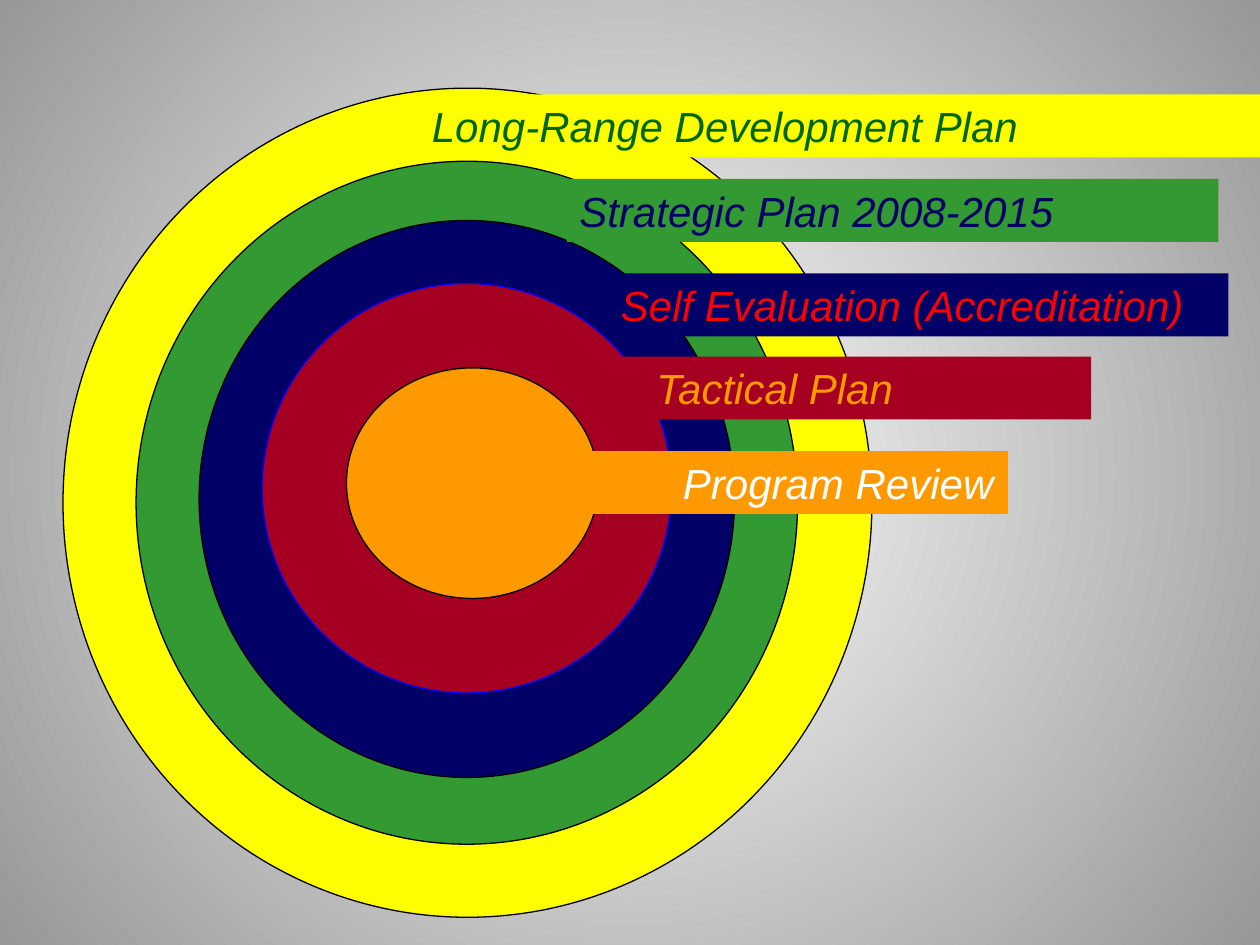
from lxml.etree import SubElement
from pptx import Presentation
from pptx.dml.color import RGBColor
from pptx.enum.shapes import MSO_SHAPE
from pptx.enum.text import MSO_ANCHOR, PP_ALIGN
from pptx.oxml.ns import qn
from pptx.util import Inches, Pt

YELLOW, GREEN, NAVY = "FFFF00", "339933", "000066"
RED, ORANGE = "A50021", "FF9900"

RINGS = [
    ((0.5, 0.7, 6.42, 6.58), YELLOW, "000000"),
    ((1.08, 1.28, 5.25, 5.42), GREEN, "000000"),
    ((1.58, 1.75, 4.25, 4.42), NAVY, "000000"),
    ((2.08, 2.25, 3.25, 3.25), RED, "0000FF"),
    ((2.75, 2.92, 2, 1.83), ORANGE, "000000"),
]
BARS = [
    ((4.5, 1.42, 5.17, 0.5), GREEN, "Strategic Plan 2008-2015", NAVY, 0.1),
    ((3.33, 0.75, 6.67, 0.5), YELLOW, "Long-Range Development Plan", "006600", 0.1),
    ((4.83, 2.17, 4.92, 0.5), NAVY, "Self Evaluation (Accreditation)", "FF0000", 0.1),
    ((4.83, 2.83, 3.83, 0.5), RED, "Tactical Plan", ORANGE, 0.38),
    ((4.58, 3.58, 3.42, 0.5), ORANGE, "Program Review", "FFFFFF", 0.84),
]


def color(code):
    return RGBColor.from_string(code)


def add_solid(slide, kind, box, fill):
    shape = slide.shapes.add_shape(kind, *map(Inches, box))
    shape.shadow.inherit = False
    shape.fill.solid()
    shape.fill.fore_color.rgb = color(fill)
    return shape


def add_ring(slide, box, fill, edge):
    ring = add_solid(slide, MSO_SHAPE.OVAL, box, fill)
    ring.line.color.rgb = color(edge)
    ring.line.width = Pt(0.75)


def add_bar(slide, box, fill, label, ink, inset):
    bar = add_solid(slide, MSO_SHAPE.RECTANGLE, box, fill)
    bar.line.fill.background()
    frame = bar.text_frame
    frame.word_wrap = True
    frame.vertical_anchor = MSO_ANCHOR.TOP
    frame.margin_left = Inches(inset)
    frame.margin_right = 0
    para = frame.paragraphs[0]
    para.text = label
    para.alignment = PP_ALIGN.LEFT
    font = para.font
    font.name = "Arial"
    font.size = Pt(24)
    font.italic = True
    font.color.rgb = color(ink)


def set_backdrop(slide, inner, outer):
    fill = slide.background.fill
    fill.gradient()
    for stop, code in zip(fill.gradient_stops, (inner, outer)):
        stop.color.rgb = color(code)
    grad = slide.element.find(".//" + qn("a:gradFill"))
    grad.remove(grad.find(qn("a:lin")))
    shade = SubElement(grad, qn("a:path"), {"path": "circle"})
    SubElement(shade, qn("a:fillToRect"), dict.fromkeys("ltrb", "50000"))


def main():
    deck = Presentation()
    deck.slide_width = Inches(10)
    deck.slide_height = Inches(7.5)
    slide = deck.slides.add_slide(deck.slide_layouts[6])
    set_backdrop(slide, "FFFFFF", "979797")
    for ring in RINGS:
        add_ring(slide, *ring)
    for bar in BARS:
        add_bar(slide, *bar)
    deck.save("out.pptx")


if __name__ == "__main__":
    main()
